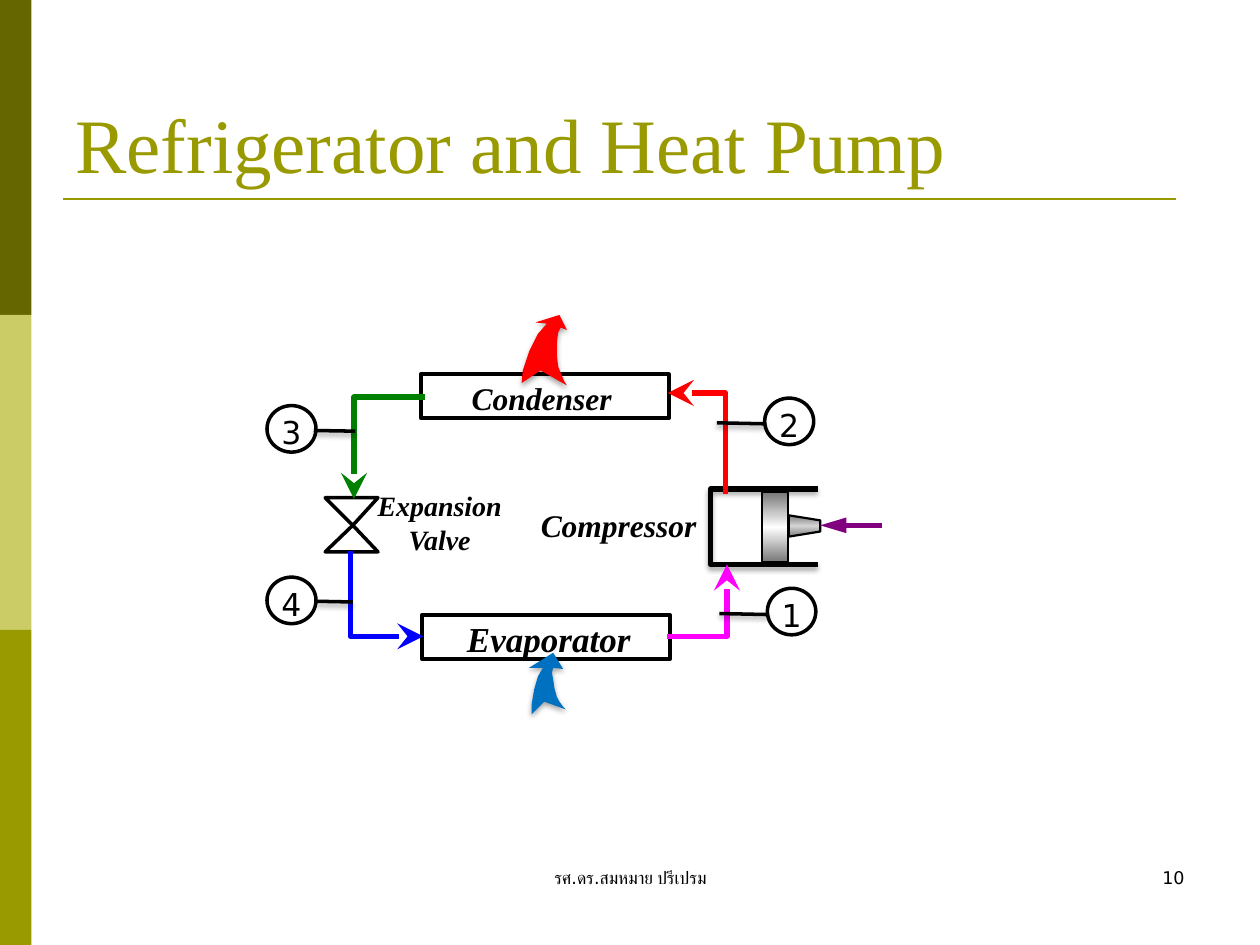
"""Builds a slide showing the refrigerator and heat pump cycle."""
from typing import NamedTuple, Optional

import lxml.etree
import pptx
import pptx.dml.color
import pptx.enum.shapes
import pptx.enum.text
import pptx.oxml.ns
import pptx.util

Pt = pptx.util.Pt
RGBColor = pptx.dml.color.RGBColor
ALIGN = pptx.enum.text.PP_ALIGN
ANCHOR = pptx.enum.text.MSO_ANCHOR
SHAPE = pptx.enum.shapes.MSO_SHAPE
qn = pptx.oxml.ns.qn

BLACK = RGBColor(0, 0, 0)
WHITE = RGBColor(255, 255, 255)
DARK_OLIVE = RGBColor(0x66, 0x66, 0)
LIGHT_OLIVE = RGBColor(0xCC, 0xCC, 0x66)
OLIVE = RGBColor(0x99, 0x99, 0)
RED = RGBColor(255, 0, 0)
MAGENTA = RGBColor(255, 0, 255)
BLUE = RGBColor(0, 0, 255)
GREEN = RGBColor(0, 0x80, 0)
SKY_BLUE = RGBColor(0, 0x70, 0xC0)
PURPLE = RGBColor(0x80, 0, 0x80)
SERIF, SANS = "Times New Roman", "DejaVu Sans"


class Box(NamedTuple):
    left: float
    top: float
    width: float
    height: float


class Label(NamedTuple):
    text: str
    box: Box
    size: float


class Outline(NamedTuple):
    points: list
    fill: Optional[RGBColor] = None
    line: Optional[RGBColor] = None
    width: float = 2
    closed: bool = True
    head: str = ""
    shadow: bool = False


class State(NamedTuple):
    number: str
    circle: Box
    stem: tuple


BARS = [DARK_OLIVE, LIGHT_OLIVE, OLIVE]
EXCHANGERS = [Box(240.5, 213.8, 141.8, 25.2), Box(241.2, 351.4, 141.8, 25.2)]
PISTON = Box(435.2, 281.2, 15.1, 40.3)
ROD = Outline([(450.7, 294.5), (468.7, 297.4), (468.7, 303.8), (450.7, 306.7)],
              line=BLACK, width=1.25)
VALVE_CENTER = (201.6, 300.2)
VALVE_ENDS = [315.4, 284.4]
CYLINDER = Outline([(467.3, 279.4), (406.1, 279.4), (406.1, 322.6), (467.3, 322.6)],
                   line=BLACK, width=3, closed=False, shadow=True)
PIPES = [
    (RED, [(414.7, 282.2), (414.7, 224.6), (381.6, 224.6)]),
    (MAGENTA, [(380.9, 363.6), (415.4, 363.6), (415.4, 322.6)]),
    (BLUE, [(200.2, 314.6), (200.2, 363.6), (241.9, 363.6)]),
    (GREEN, [(242.6, 226.8), (202.3, 226.8), (202.3, 285.1)]),
]
HEAT_ARROWS = [
    (SKY_BLUE, [(303.8, 408.2), (303.8, 402.5), (305.3, 393.8), (307.4, 386.6), (310.3, 381.6),
                (302.4, 381.6), (316.1, 373), (321.8, 382.3), (316.1, 381.6), (315.4, 384.5),
                (316.1, 388.1), (316.8, 393.1), (318.2, 398.2), (319.7, 401), (321.8, 403.9),
                (323.3, 405.4), (311, 401)]),
    (RED, [(298.1, 218.9), (298.8, 211.7), (302.4, 200.9), (307.4, 190.8), (312.5, 185),
           (306, 184.3), (319.7, 180), (324, 188.6), (320.4, 187.2), (319, 190.1),
           (318.2, 195.8), (318.2, 203), (319, 209.5), (320.4, 213.1), (322.6, 218.2),
           (324, 220.3), (308.9, 211.7)]),
]
LABELS = [
    Label("Condenser", Box(242.6, 213.1, 133.9, 28.8), 18),
    Label("Expansion Valve", Box(205.9, 275.8, 90.7, 46.1), 16),
    Label("Compressor", Box(298.8, 285.8, 109.4, 28.8), 18),
    Label("Evaporator", Box(244.1, 349.2, 139, 31.7), 20),
]
STATES = [
    State("1", Box(438.5, 336.2, 27.7, 26.6), ((411.1, 350.6), (439.2, 351.2))),
    State("2", Box(437, 227.5, 28, 26.6), ((409.7, 241.6), (437.8, 242.2))),
    State("3", Box(152.6, 231.8, 28, 26.6), ((179.3, 246), (203, 246.4))),
    State("4", Box(152.6, 329.8, 28, 26.6), ((180.7, 343.6), (201.6, 344))),
]


def add_child(parent, tag: str, **attributes: str):
    """Append a drawing element with the given attributes."""
    return lxml.etree.SubElement(parent, qn(tag), **attributes)


def style(shape, fill=None, line=None, width=2.0, head="", head_width="lg", shadow=False):
    """Set the fill, line, arrowhead and shadow of a shape or connector."""
    if hasattr(shape, "fill"):
        if fill is None:
            shape.fill.background()
        else:
            shape.fill.solid()
            shape.fill.fore_color.rgb = fill
    if line is None:
        shape.line.fill.background()
    else:
        shape.line.color.rgb = line
        shape.line.width = Pt(width)
    properties = shape._element.spPr
    if head:
        add_child(properties.find(qn("a:ln")), "a:tailEnd", type=head, w=head_width, len="lg")
    effects = add_child(properties, "a:effectLst")
    if shadow:
        outer = add_child(effects, "a:outerShdw", blurRad=str(Pt(3.1)), dist=str(Pt(1.8)),
                          dir="5400000", rotWithShape="0")
        add_child(add_child(outer, "a:srgbClr", val="000000"), "a:alpha", val="35000")


def shade(shape, edge: str, middle: str):
    """Give a shape a vertical gradient that is lightest in the middle."""
    shape.fill.gradient()
    shape.fill.gradient_angle = 90
    stops = shape._element.spPr.find(".//" + qn("a:gsLst"))
    stops.clear()
    for position, color in ((0, edge), (50000, middle), (100000, edge)):
        add_child(add_child(stops, "a:gs", pos=str(position)), "a:srgbClr", val=color)


def add_box(slide, kind, box: Box, **look):
    """Add a styled preset shape."""
    shape = slide.shapes.add_shape(kind, *map(Pt, box))
    style(shape, **look)
    return shape


def add_outline(slide, outline: Outline):
    """Add a freeform through the points of an outline."""
    points = [(Pt(x), Pt(y)) for x, y in outline.points]
    builder = slide.shapes.build_freeform(*points[0])
    builder.add_line_segments(points[1:], close=outline.closed)
    shape = builder.convert_to_shape()
    style(shape, outline.fill, outline.line, outline.width, outline.head, shadow=outline.shadow)
    return shape


def add_line(slide, start: tuple, end: tuple, **look):
    """Add a styled straight connector."""
    connector = slide.shapes.add_connector(
        pptx.enum.shapes.MSO_CONNECTOR.STRAIGHT, *map(Pt, start + end))
    style(connector, **look)


def write(shape, text: str, *, size: float, font=SANS, color=BLACK, align=ALIGN.CENTER,
          anchor=ANCHOR.TOP, strong=False):
    """Write formatted text in a shape."""
    frame = shape.text_frame
    frame.word_wrap = True
    frame.vertical_anchor = anchor
    paragraph = frame.paragraphs[0]
    paragraph.alignment = align
    run = paragraph.add_run()
    run.text = text
    run.font.name, run.font.size, run.font.color.rgb = font, Pt(size), color
    run.font.bold = run.font.italic = strong


def add_text(slide, text: str, box: Box, **text_format):
    """Add a text box."""
    write(slide.shapes.add_textbox(*map(Pt, box)), text, **text_format)


def add_state(slide, state: State):
    """Add a numbered circle with its stem."""
    circle = add_box(slide, SHAPE.OVAL, state.circle, line=BLACK)
    frame = circle.text_frame
    frame.margin_left = frame.margin_right = frame.margin_bottom = 0
    frame.margin_top = Pt(4)
    write(circle, state.number, size=18, anchor=ANCHOR.MIDDLE)
    add_line(slide, *state.stem, line=BLACK, shadow=True)


def main():
    """Build and save the slide."""
    presentation = pptx.Presentation()
    presentation.slide_width, presentation.slide_height = Pt(720), Pt(540)
    slide = presentation.slides.add_slide(presentation.slide_layouts[6])
    for index, color in enumerate(BARS):
        add_box(slide, SHAPE.RECTANGLE, Box(0, 180 * index, 18, 180), fill=color)
    add_line(slide, (36, 113.8), (671.8, 113.8), line=OLIVE, width=1.5)
    add_text(slide, "รศ.ดร.สมหมาย ปรีเปรม", Box(246.2, 491.8, 228.2, 36), size=10)
    add_text(slide, "10", Box(516.2, 491.8, 167.8, 36), size=10, align=ALIGN.RIGHT)
    add_text(slide, "Refrigerator and Heat Pump", Box(36, 21.6, 648, 90), size=44,
             font=SERIF, color=OLIVE, align=ALIGN.LEFT, anchor=ANCHOR.BOTTOM)
    for box in EXCHANGERS:
        add_box(slide, SHAPE.RECTANGLE, box, fill=WHITE, line=BLACK)
    for end in VALVE_ENDS:
        add_outline(slide, Outline([(185.8, end), (216, end), VALVE_CENTER], WHITE, BLACK))
    add_outline(slide, CYLINDER)
    shade(add_outline(slide, ROD), "808080", "D3D3D3")
    shade(add_box(slide, SHAPE.RECTANGLE, PISTON, line=BLACK, width=1.25), "767676", "FFFFFF")
    for color, points in PIPES:
        add_outline(slide, Outline(points, line=color, width=3, closed=False, head="stealth"))
    for color, points in HEAT_ARROWS:
        add_outline(slide, Outline(points, fill=color, shadow=True))
    add_line(slide, (504, 300.2), (468.7, 300.2), line=PURPLE, width=3,
             head="triangle", head_width="med")
    for label in LABELS:
        add_text(slide, label.text, label.box, size=label.size, font=SERIF, strong=True)
    for state in STATES:
        add_state(slide, state)
    presentation.save("out.pptx")


if __name__ == "__main__":
    main()
